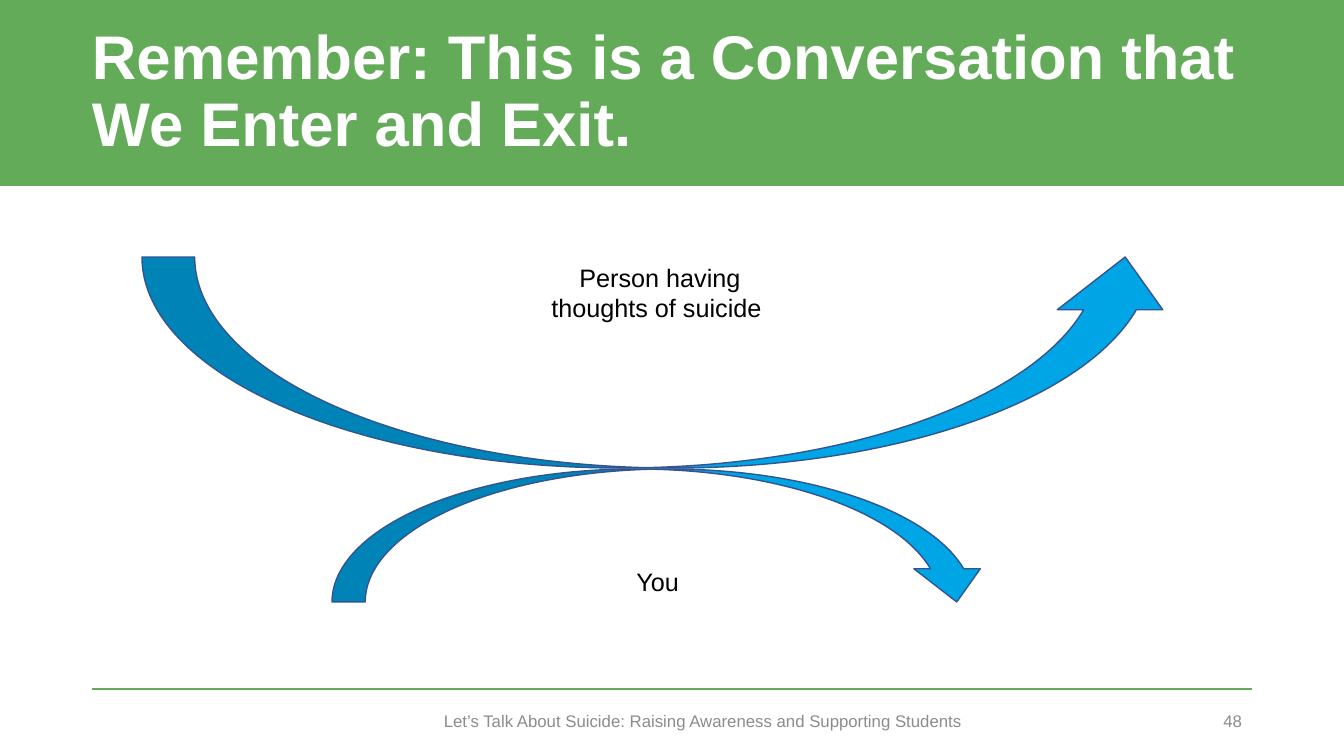
from lxml.etree import SubElement
from pptx import Presentation
from pptx.dml.color import RGBColor
from pptx.enum.shapes import MSO_CONNECTOR, MSO_SHAPE
from pptx.enum.text import MSO_ANCHOR, PP_ALIGN
from pptx.oxml.ns import qn
from pptx.util import Emu, Pt

PAGE_WIDTH, PAGE_HEIGHT = 1344, 756
GREEN, BLUE, NAVY = "63AB59", "00A5E6", "325491"
WHITE, BLACK, GREY = "FFFFFF", "000000", "8C8C8C"


def px(length):
    return Emu(round(length * 914400 / 100.8))


def color(code):
    return RGBColor.from_string(code)


def write(shape, text, size=18, fill=BLACK, bold=False, align=PP_ALIGN.CENTER,
          anchor=MSO_ANCHOR.TOP, margins=(5, 5, 5, 5), spacing=1.0):
    frame = shape.text_frame
    frame.word_wrap = True
    frame.vertical_anchor = anchor
    (frame.margin_left, frame.margin_top,
     frame.margin_right, frame.margin_bottom) = map(px, margins)
    para = frame.paragraphs[0]
    para.alignment = align
    para.line_spacing = spacing
    span = para.add_run()
    span.text = text
    span.font.name = "Arial"
    span.font.size = Pt(size)
    span.font.bold = bold
    span.font.color.rgb = color(fill)


def add_label(page, box, text, **style):
    write(page.shapes.add_textbox(*map(px, box)), text, **style)


def add_filled(page, kind, box, fill):
    shape = page.shapes.add_shape(kind, *map(px, box))
    shape.shadow.inherit = False
    shape.fill.solid()
    shape.fill.fore_color.rgb = color(fill)
    return shape


def add_title(page, box, text):
    banner = add_filled(page, MSO_SHAPE.RECTANGLE, box, GREEN)
    banner.line.fill.background()
    write(banner, text, size=44, fill=WHITE, bold=True, align=PP_ALIGN.LEFT,
          anchor=MSO_ANCHOR.MIDDLE, margins=(92, 5, 101, 5), spacing=0.9)


def add_path_arrow(page, box, flipped=False):
    arrow = add_filled(page, MSO_SHAPE.CURVED_UP_ARROW, box, BLUE)
    arrow.line.color.rgb = color(NAVY)
    arrow.line.width = Pt(1)
    if flipped:
        arrow._element.spPr.find(qn("a:xfrm")).set("flipV", "1")


def add_conversation(page, box):
    left, top, width, height = box
    # Two paths that meet in the middle
    meeting = top + 211
    add_path_arrow(page, (left, top, width, meeting - top))
    add_path_arrow(page, (left + 190, meeting + 1, 658, top + height - meeting - 1),
                   flipped=True)
    # Who follows each path
    add_label(page, (left + 397, top, 242, 72), "Person having thoughts of suicide ")
    add_label(page, (left + 472, top + 304, 94, 40), "You ")


def add_footer(page, box, text, number):
    left, top, width, height = box
    right = left + width
    # Rule above the footer
    rule = page.shapes.add_connector(
        MSO_CONNECTOR.STRAIGHT, px(left), px(top), px(right), px(top))
    rule.line.color.rgb = color(GREEN)
    rule.line.width = Pt(1.5)
    SubElement(rule._element.spPr, qn("a:effectLst"))
    # Talk title and page number
    style = dict(size=12, fill=GREY, anchor=MSO_ANCHOR.MIDDLE, margins=(10, 5, 10, 5))
    row = top + height - 40
    add_label(page, (left + 280, row, 662, 40), text, **style)
    add_label(page, (right - 302, row, 302, 40), number, align=PP_ALIGN.RIGHT, **style)


def main():
    deck = Presentation()
    deck.slide_width, deck.slide_height = px(PAGE_WIDTH), px(PAGE_HEIGHT)
    page = deck.slides.add_slide(deck.slide_layouts[6])
    add_title(page, (0, 0, PAGE_WIDTH, 186),
              "Remember: This is a Conversation that We Enter and Exit.")
    add_conversation(page, (142, 257, 1036, 345))
    add_footer(page, (92, 689, 1160, 52),
               "Let’s Talk About Suicide: Raising Awareness and Supporting Students", "48")
    deck.save("out.pptx")


if __name__ == "__main__":
    main()
